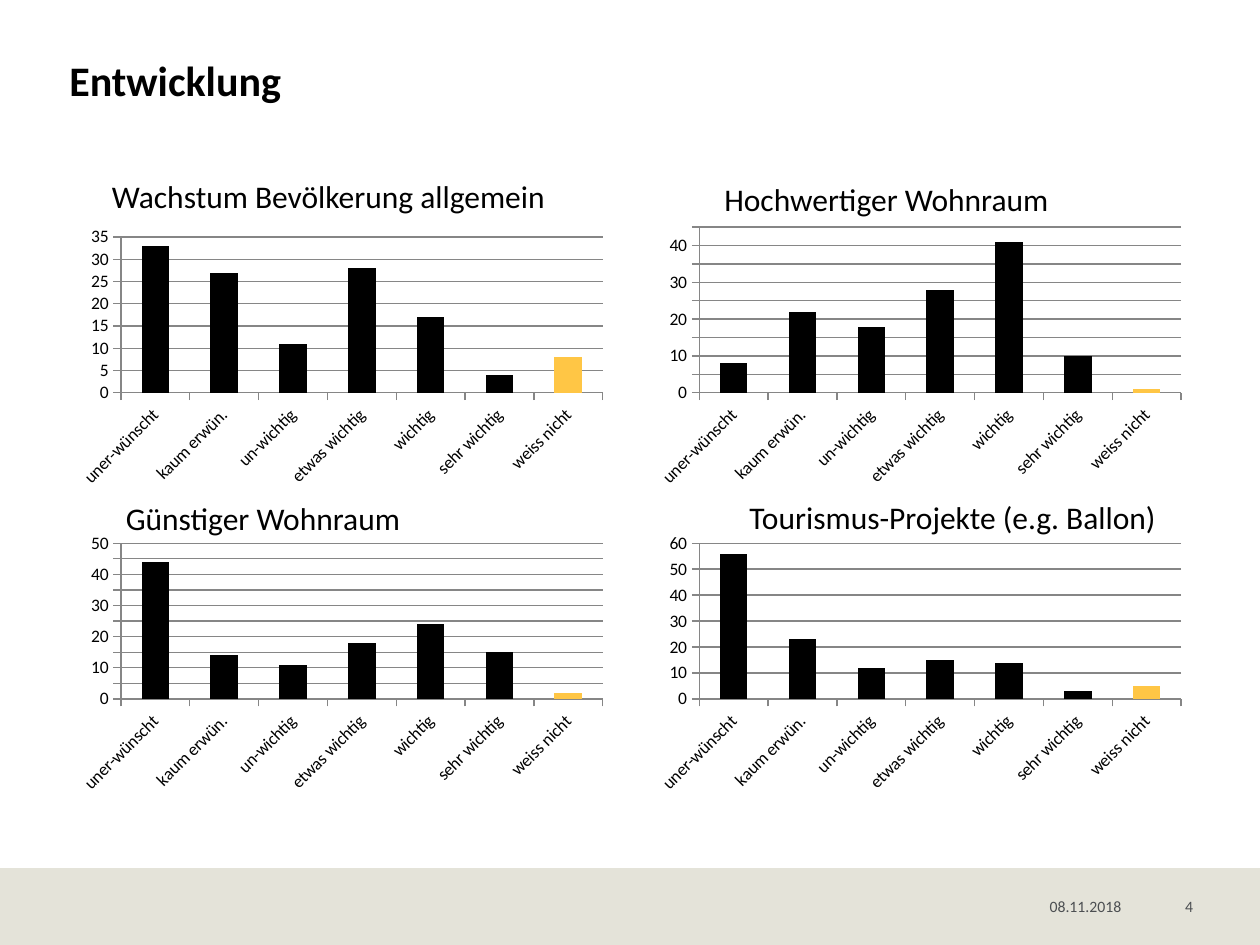
from pptx import Presentation
from pptx import util as u
from pptx.chart.data import CategoryChartData
from pptx.dml.color import RGBColor
from pptx.enum import chart as ch, shapes, text as tx

W, H = 10, 7.5
FONT = "Calibri"
BLACK, GOLD, GREY, SAND, LINE = "000000", "FFC645", "4C4F52", "E4E3D9", "868686"

# Chart grid: two columns and two rows
LEFT, TOP = 0.55, 1.76
CELL_W, CELL_H = 4.32, 2.15
STEP_X, STEP_Y = 4.59, 2.43

CATS = ["uner-wünscht", "kaum erwün.", "un-wichtig", "etwas wichtig",
        "wichtig", "sehr wichtig", "weiss nicht"]

# Heading, its box, answers, axis maximum, axis step
PANELS = [
    ("Wachstum Bevölkerung allgemein", (0.79, 1.36, 3.68, 0.4),
     (33, 27, 11, 28, 17, 4, 8), 35, 5),
    ("Hochwertiger Wohnraum", (5.65, 1.38, 2.81, 0.4),
     (8, 22, 18, 28, 41, 10, 1), 45, 5),
    ("Günstiger Wohnraum", (0.9, 3.91, 2.41, 0.4),
     (44, 14, 11, 18, 24, 15, 2), 50, 5),
    ("Tourismus-Projekte (e.g. Ballon)", (5.85, 3.9, 3.46, 0.4),
     (56, 23, 12, 15, 14, 3, 5), 60, 10),
]


def rgb(code):
    return RGBColor.from_string(code)


def inch(box):
    return [u.Inches(v) for v in box]


def paint(fill, code):
    fill.solid()
    fill.fore_color.rgb = rgb(code)


def style(font, size, code, bold=False):
    font.name, font.size, font.bold = FONT, u.Pt(size), bold
    font.color.rgb = rgb(code)


def write(frame, words, size, code, bold=False, align=tx.PP_ALIGN.LEFT):
    para = frame.paragraphs[0]
    para.alignment = align
    run = para.add_run()
    run.text = words
    style(run.font, size, code, bold)


def trim(frame, anchor):
    frame.margin_left = frame.margin_right = 0
    frame.margin_top = frame.margin_bottom = 0
    frame.vertical_anchor = anchor
    frame.word_wrap = True


def add_title(slide, box, words):
    title = slide.shapes.title
    title.left, title.top, title.width, title.height = inch(box)
    trim(title.text_frame, tx.MSO_ANCHOR.MIDDLE)
    write(title.text_frame, words, 24, BLACK, bold=True)


def add_foot(slide, box):
    band = slide.shapes.add_shape(shapes.MSO_SHAPE.RECTANGLE, *inch(box))
    band.shadow.inherit = False
    paint(band.fill, SAND)
    band.line.fill.background()
    top = box[1] + 0.04
    for words, left, width, align in (
            ("08.11.2018", 8.33, 0.71, tx.PP_ALIGN.LEFT),
            ("4", 9.04, 0.43, tx.PP_ALIGN.RIGHT)):
        note = slide.shapes.add_textbox(*inch((left, top, width, 0.34)))
        trim(note.text_frame, tx.MSO_ANCHOR.BOTTOM)
        write(note.text_frame, words, 9, GREY, align=align)


def add_head(slide, box, words):
    frame = slide.shapes.add_textbox(*inch(box)).text_frame
    frame.word_wrap = False
    frame.auto_size = tx.MSO_AUTO_SIZE.SHAPE_TO_FIT_TEXT
    write(frame, words, 18, BLACK)


def add_bars(slide, box, vals, top, step):
    data = CategoryChartData()
    data.categories = CATS
    data.add_series("Series 1", vals)
    chart = slide.shapes.add_chart(
        ch.XL_CHART_TYPE.COLUMN_CLUSTERED, *inch(box), data).chart
    chart.has_legend = chart.has_title = False
    style(chart.font, 10, BLACK)

    # Bars, with the last answer set apart
    plot = chart.plots[0]
    plot.gap_width = 150
    plot.vary_by_categories = False
    bars = plot.series[0]
    bars.invert_if_negative = False
    paint(bars.format.fill, BLACK)
    paint(bars.points[len(CATS) - 1].format.fill, GOLD)

    # Axes
    cat, val = chart.category_axis, chart.value_axis
    val.minimum_scale, val.maximum_scale, val.major_unit = 0, top, step
    val.has_major_gridlines = True
    for axis in (cat, val):
        axis.major_tick_mark = ch.XL_TICK_MARK.OUTSIDE
        style(axis.tick_labels.font, 10, BLACK)
    for part in (cat, val, val.major_gridlines):
        part.format.line.color.rgb = rgb(LINE)
        part.format.line.width = u.Pt(0.75)
    # Slant the answer labels by 45 degrees
    cat._element.txPr.bodyPr.set("rot", "-2700000")


def main():
    deck = Presentation()
    deck.slide_width, deck.slide_height = inch((W, H))
    slide = deck.slides.add_slide(deck.slide_layouts[5])
    add_foot(slide, (0, 6.89, W, H - 6.89))
    add_title(slide, (LEFT, 0.43, 8.91, 0.4), "Entwicklung")
    for i, (words, head, vals, top, step) in enumerate(PANELS):
        row, col = divmod(i, 2)
        cell = (LEFT + col * STEP_X, TOP + row * STEP_Y, CELL_W, CELL_H)
        add_bars(slide, cell, vals, top, step)
        add_head(slide, head, words)
    deck.save("out.pptx")


if __name__ == "__main__":
    main()
